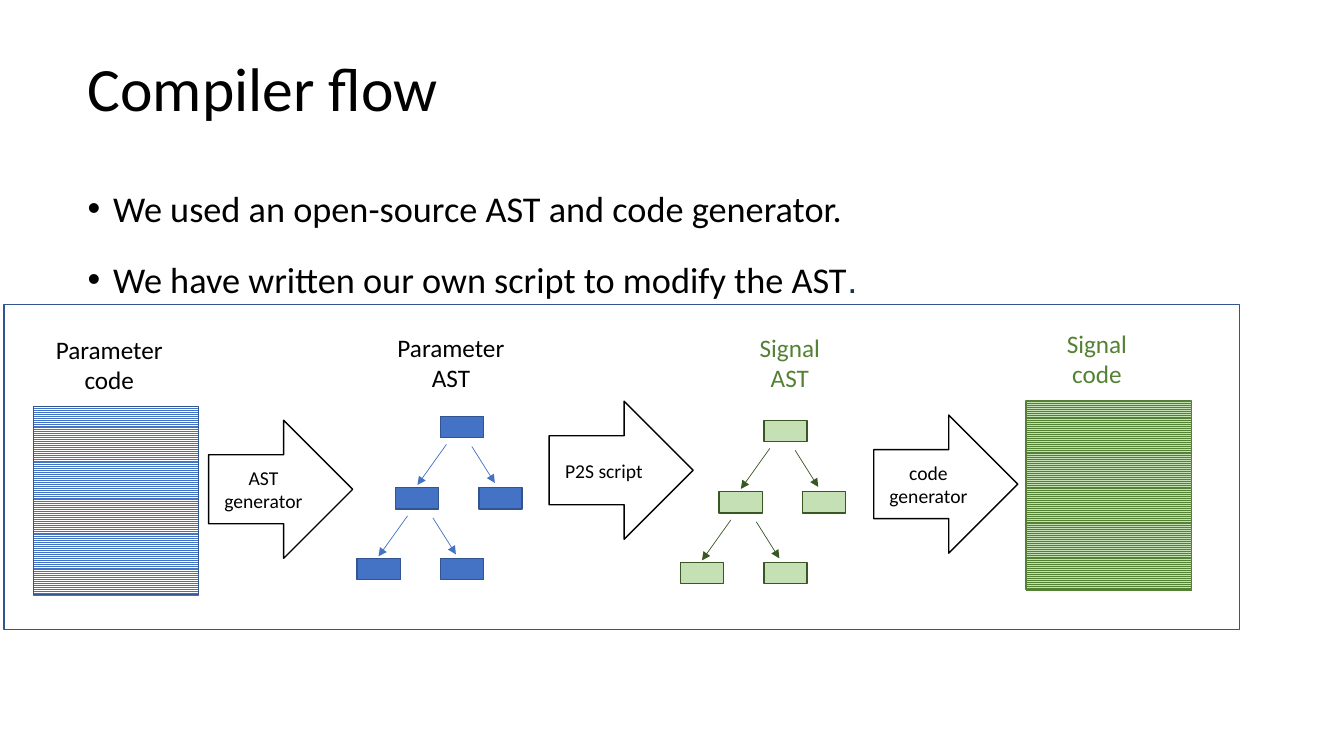
import pptx
import pptx.dml.color
import pptx.enum.dml
import pptx.enum.shapes
import pptx.enum.text
import pptx.oxml.ns
import pptx.util
from lxml import etree

Cm = pptx.util.Cm
Pt = pptx.util.Pt
SHAPES = pptx.enum.shapes.MSO_SHAPE
ALIGN = pptx.enum.text.PP_ALIGN
ANCHOR = pptx.enum.text.MSO_ANCHOR

# Content; positions are in centimetres
TITLE = "Compiler flow"
BULLETS = [
    [("We used an open-source AST and code generator.", {})],
    [("We have written our own script to modify the AST", {}),
     (".", {"font": "Arial", "color": "period"})],
]
LABELS = [  # lines, left, top, colour
    (["Parameter", "code"], 0.38, 8.03, "text"),
    (["Parameter", "AST"], 8.99, 7.98, "text"),
    (["Signal", "AST"], 17.53, 7.98, "green"),
    (["Signal", "code"], 25.27, 7.87, "green"),
]
STEPS = [  # text, left, top
    ("AST generator", 5.26, 10.59),
    ("P2S script", 13.84, 10.11),
    ("code generator", 22.02, 10.46),
]
CODE_BLOCKS = [  # left, top, stripes, ground, outline
    (0.84, 10.24, "blue", "white", "navy"),
    (25.86, 10.11, "green", "mint", "green"),
]
TREES = [  # root left, root top, fill, outline, branch colour
    (11.1, 10.49, "blue", "navy", "blue"),
    (19.25, 10.59, "mint", "forest", "forest"),
]

# Tree geometry relative to the root
NODES = [(0, 0), (-1.13, 1.8), (0.97, 1.8), (-2.1, 3.58), (0, 3.58)]
BRANCH_ORIGINS = [(0, 0), (-0.98, 1.8)]
BRANCHES = [(0.15, 0.71, -0.58, 1.73), (0.79, 0.76, 1.37, 1.68)]
NODE_SIZE = (1.09, 0.54)
STEP_SIZE = (3.63, 3.48)
CODE_SIZE = (4.17, 4.75)
LABEL_SIZE = (4.75, 2.31)

THEME = {
    "font": "Calibri",
    "colors": {"text": "000000", "white": "FFFFFF", "blue": "4472C4",
               "navy": "325491", "green": "548235", "mint": "C5E0B4",
               "forest": "385723", "period": "0E3852"},
    "sizes": {"title": 44, "bullet": 25.9, "label": 18, "step": 14},
    "lines": {"outline": 1, "branch": 0.5},
}


def rgb(name):
    return pptx.dml.color.RGBColor.from_string(THEME["colors"][name])


def write_text(frame, paragraphs, size, color="text", align=ALIGN.LEFT,
               anchor=ANCHOR.MIDDLE, wrap=True, line_spacing=None,
               space_before=0, bullet=False):
    """Each paragraph is a string or a list of (text, overrides) runs."""
    frame.word_wrap = wrap
    frame.vertical_anchor = anchor
    for index, content in enumerate(paragraphs):
        paragraph = frame.add_paragraph() if index else frame.paragraphs[0]
        paragraph.alignment = align
        if line_spacing:
            paragraph.line_spacing = line_spacing
        if index and space_before:
            paragraph.space_before = Pt(space_before)
        if bullet:
            properties = paragraph._p.get_or_add_pPr()
            indent = Cm(0.64)
            properties.set("marL", str(indent))
            properties.set("indent", str(-indent))
            for tag, attribute, value in (("a:buFont", "typeface", "Arial"),
                                          ("a:buChar", "char", "•")):
                element = etree.SubElement(properties, pptx.oxml.ns.qn(tag))
                element.set(attribute, value)
        runs = [(content, {})] if isinstance(content, str) else content
        for text, overrides in runs:
            run = paragraph.add_run()
            run.text = text
            run.font.name = overrides.get("font", THEME["font"])
            run.font.size = Pt(THEME["sizes"][size])
            run.font.color.rgb = rgb(overrides.get("color", color))


def add_text(slide, left, top, width, height, paragraphs, **text_format):
    box = slide.shapes.add_textbox(Cm(left), Cm(top), Cm(width), Cm(height))
    write_text(box.text_frame, paragraphs, **text_format)


def add_outlined(slide, kind, left, top, width, height, outline, fill=None):
    shape = slide.shapes.add_shape(kind, Cm(left), Cm(top), Cm(width), Cm(height))
    shape.shadow.inherit = False
    shape.line.color.rgb = rgb(outline)
    shape.line.width = Pt(THEME["lines"]["outline"])
    if fill:
        shape.fill.solid()
        shape.fill.fore_color.rgb = rgb(fill)
    else:
        shape.fill.background()
    return shape


def add_branch(slide, x, y, branch, color):
    x1, y1, x2, y2 = branch
    connector = slide.shapes.add_connector(
        pptx.enum.shapes.MSO_CONNECTOR.STRAIGHT,
        Cm(x + x1), Cm(y + y1), Cm(x + x2), Cm(y + y2))
    connector.line.color.rgb = rgb(color)
    connector.line.width = Pt(THEME["lines"]["branch"])
    tail = etree.SubElement(connector.line._get_or_add_ln(),
                            pptx.oxml.ns.qn("a:tailEnd"))
    tail.set("type", "triangle")
    etree.SubElement(connector._element.spPr, pptx.oxml.ns.qn("a:effectLst"))


def add_tree(slide, left, top, fill, outline, branch_color):
    for x, y in NODES:
        add_outlined(slide, SHAPES.RECTANGLE, left + x, top + y, *NODE_SIZE,
                     outline, fill)
    for x, y in BRANCH_ORIGINS:
        for branch in BRANCHES:
            add_branch(slide, left + x, top + y, branch, branch_color)


def main():
    presentation = pptx.Presentation()
    presentation.slide_width = Cm(33.87)
    presentation.slide_height = Cm(19.05)
    slide = presentation.slides.add_slide(presentation.slide_layouts[6])

    # Title
    add_text(slide, 1.96, 0.48, 30.05, 3.68, [TITLE], size="title",
             line_spacing=0.9)

    # Diagram frame
    add_outlined(slide, SHAPES.RECTANGLE, 0.1, 7.67, 31.14, 8.2, "navy")

    # Striped code blocks
    for left, top, stripes, ground, outline in CODE_BLOCKS:
        block = add_outlined(slide, SHAPES.RECTANGLE, left, top, *CODE_SIZE, outline)
        block.fill.patterned()
        block.fill.pattern = pptx.enum.dml.MSO_PATTERN.LIGHT_HORIZONTAL
        block.fill.fore_color.rgb = rgb(stripes)
        block.fill.back_color.rgb = rgb(ground)

    # Syntax trees
    for tree in TREES:
        add_tree(slide, *tree)

    # Stage labels
    for lines, left, top, color in LABELS:
        add_text(slide, left, top, *LABEL_SIZE, lines, size="label",
                 color=color, align=ALIGN.CENTER, wrap=False)

    # Step arrows
    for text, left, top in STEPS:
        arrow = add_outlined(slide, SHAPES.RIGHT_ARROW, left, top, *STEP_SIZE, "text")
        write_text(arrow.text_frame, [text], size="step", align=ALIGN.CENTER)

    # Bullets
    add_text(slide, 1.96, 4.24, 28.22, 3.45, BULLETS, size="bullet",
             anchor=ANCHOR.TOP, line_spacing=1.3, space_before=10, bullet=True)

    presentation.save("out.pptx")


if __name__ == "__main__":
    main()
